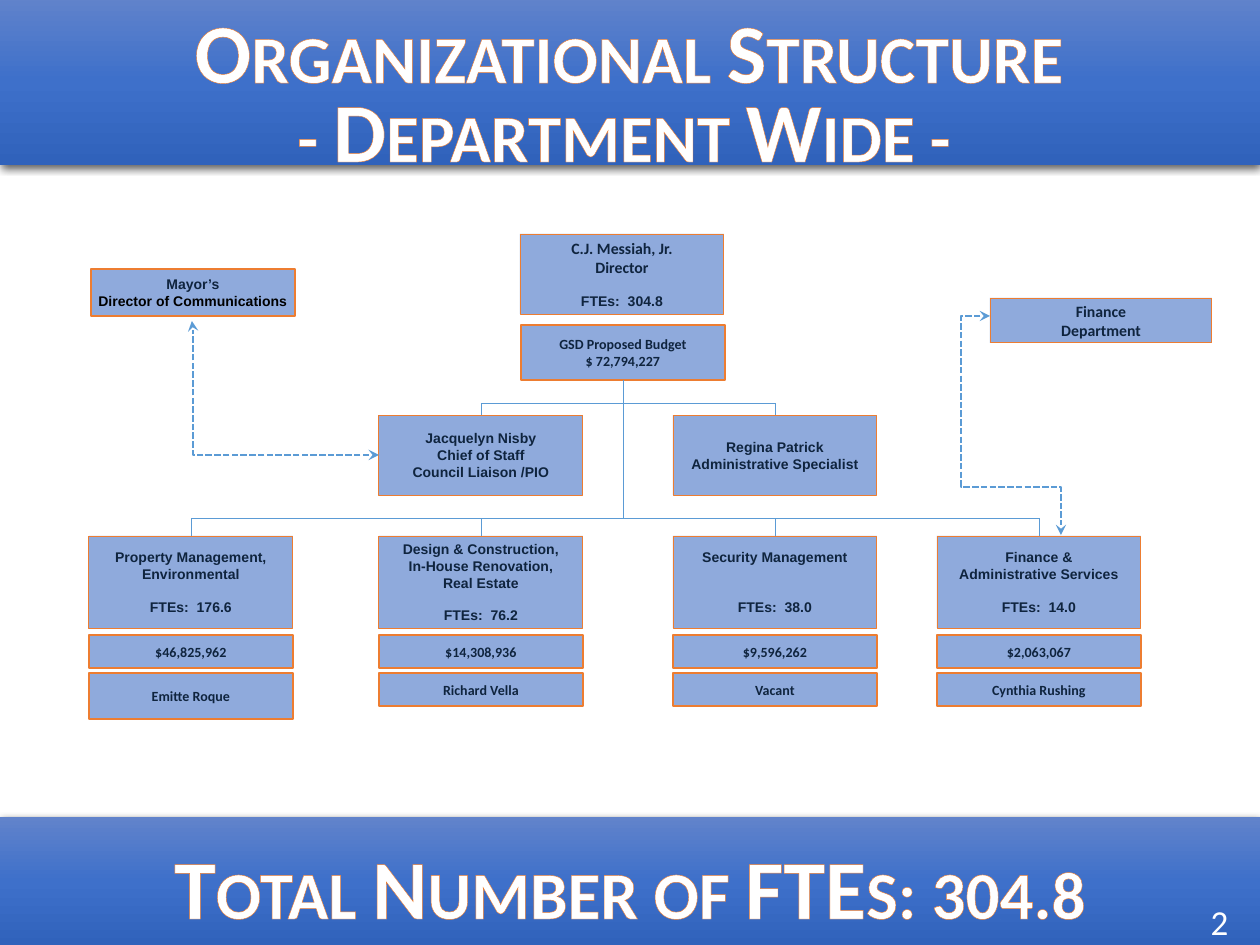
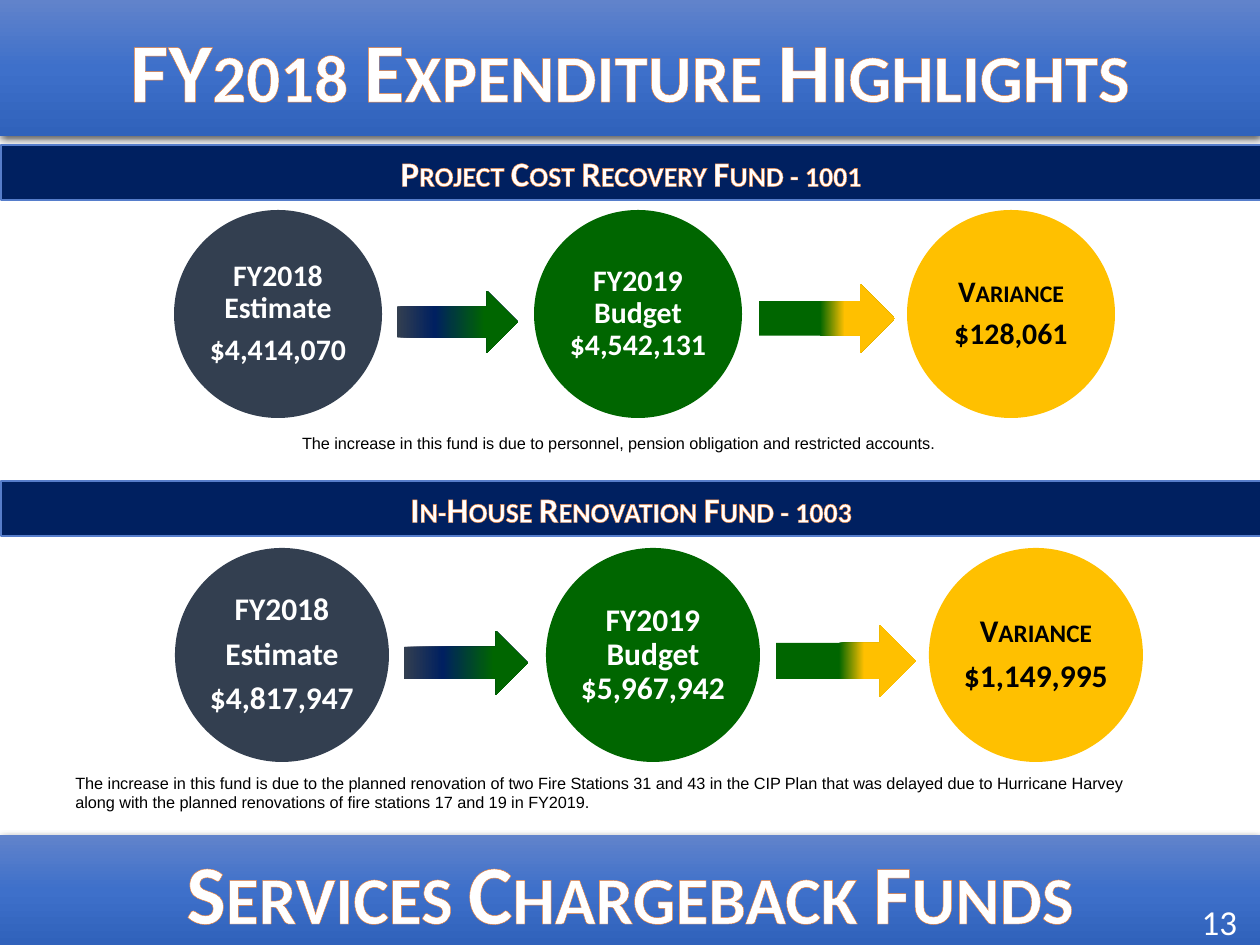
from dataclasses import dataclass

from pptx import Presentation
from pptx.dml.color import RGBColor
from pptx.enum.dml import MSO_LINE
from pptx.enum.shapes import MSO_CONNECTOR, MSO_SHAPE
from pptx.enum.text import MSO_ANCHOR, PP_ALIGN
from pptx.oxml import parse_xml
from pptx.oxml.ns import nsdecls, qn
from pptx.util import Pt

RECT, OVAL, ARROW = MSO_SHAPE.RECTANGLE, MSO_SHAPE.OVAL, MSO_SHAPE.RIGHT_ARROW
STRAIGHT, ELBOW = MSO_CONNECTOR.STRAIGHT, MSO_CONNECTOR.ELBOW
CENTER, LEFT = PP_ALIGN.CENTER, PP_ALIGN.LEFT
MIDDLE = MSO_ANCHOR.MIDDLE
DASHED = MSO_LINE.SQUARE_DOT
TOP_SIDE, BOTTOM_SIDE = 0, 2
WIDTH, HEIGHT = 1260, 945


def emu(px):
    return round(px * 914400 / 126)


def rgb(color):
    return RGBColor.from_string(color)


@dataclass(frozen=True)
class Theme:
    heading: str = "Calibri"
    body: str = "Arial"
    white: str = "FFFFFF"
    black: str = "000000"
    ink: str = "0F243E"
    box: str = "8FAADC"
    accent: str = "ED7D31"
    link: str = "5B9BD5"
    navy: str = "002060"
    bar_edge: str = "567DCB"
    slate: str = "333F50"
    green: str = "006600"
    gold: str = "FFC000"
    band: tuple = ((0, "6183CB"), (50, "3E70CA"), (100, "3062BB"))
    title_size: float = 48
    bar_size: float = 20
    box_size: float = 8
    name_size: float = 9
    note_size: float = 9.3
    number_size: float = 20


class Deck:
    def __init__(self, theme):
        self.theme = theme
        self.prs = Presentation()
        self.prs.slide_width, self.prs.slide_height = emu(WIDTH), emu(HEIGHT)
        self.slide = None

    def new_slide(self):
        self.slide = self.prs.slides.add_slide(self.prs.slide_layouts[6])

    def shape(self, kind, x, y, w, h, fill=None, line=None, weight=0.75):
        sp = self.slide.shapes.add_shape(kind, emu(x), emu(y), emu(w), emu(h))
        sp.shadow.inherit = False
        if fill:
            sp.fill.solid()
            sp.fill.fore_color.rgb = rgb(fill)
        if line:
            sp.line.color.rgb = rgb(line)
            sp.line.width = Pt(weight)
        else:
            sp.line.fill.background()
        return sp

    def gradient(self, sp, stops, angle):
        sp.fill.background()
        gs = "".join(
            f'<a:gs pos="{pos * 1000}"><a:srgbClr val="{color}"/></a:gs>'
            for pos, color in stops)
        props = sp._element.spPr
        props.replace(props.find(qn("a:noFill")), parse_xml(
            f'<a:gradFill {nsdecls("a")} rotWithShape="1"><a:gsLst>{gs}</a:gsLst>'
            f'<a:lin ang="{angle * 60000}" scaled="0"/></a:gradFill>'))

    def style(self, p, font, size, color, bold=True, align=CENTER):
        p.alignment = align
        for r in p.runs:
            r.font.name, r.font.size = font, Pt(size)
            r.font.bold, r.font.color.rgb = bold, rgb(color)

    def small_caps(self, p, outline=False):
        for r in p.runs:
            props = r._r.get_or_add_rPr()
            props.set("cap", "small")
            if outline:
                props.insert(0, parse_xml(
                    f'<a:ln {nsdecls("a")} w="6600"><a:solidFill><a:srgbClr '
                    f'val="{self.theme.accent}"/></a:solidFill></a:ln>'))

    def set_text(self, sp, lines, font, size, color, bold=True, align=CENTER, wrap=True):
        tf = sp.text_frame
        tf.text = "\n".join(lines)
        tf.word_wrap, tf.vertical_anchor = wrap, MIDDLE
        for p in tf.paragraphs:
            self.style(p, font, size, color, bold, align)
        return tf

    def label(self, x, y, w, h, text, font, size, color, bold=False, align=CENTER):
        sp = self.slide.shapes.add_textbox(emu(x), emu(y), emu(w), emu(h))
        return self.set_text(sp, [text], font, size, color, bold, align)

    def band(self, y, h):
        sp = self.shape(RECT, 0, y, WIDTH, h)
        self.gradient(sp, self.theme.band, 90)
        effects = sp._element.spPr.find(qn("a:effectLst"))
        effects.append(parse_xml(
            f'<a:outerShdw {nsdecls("a")} blurRad="57150" dist="19050" dir="5400000" '
            f'algn="ctr" rotWithShape="0"><a:srgbClr val="{self.theme.black}">'
            '<a:alpha val="63000"/></a:srgbClr></a:outerShdw>'))

    def title(self, text, y, x=0):
        t = self.theme
        tf = self.label(x, y, WIDTH, 115, text, t.heading, t.title_size, t.white, True)
        self.small_caps(tf.paragraphs[0], outline=True)

    def page_number(self, number):
        t = self.theme
        self.label(1179, 898, 81, 47, str(number), t.heading, t.number_size, t.white)

    def note(self, x, y, w, h, text, align):
        t = self.theme
        self.label(x, y, w, h, text, t.body, t.note_size, t.black, align=align)

    def bar(self, y, text):
        t = self.theme
        sp = self.shape(RECT, 1, y, WIDTH, 55, t.navy, t.bar_edge)
        tf = self.set_text(sp, [text], t.heading, t.bar_size, t.white)
        self.small_caps(tf.paragraphs[0], outline=True)

    def box(self, x, y, w, h, lines, font, size=None, gap=0, weight=0.5):
        t = self.theme
        sp = self.shape(RECT, x, y, w, h, t.box, t.accent, weight)
        tf = self.set_text(sp, lines, font, size or t.box_size, t.ink, wrap=False)
        if gap:
            tf.paragraphs[-1].space_before = Pt(gap)
        return sp

    def circle(self, x, y, d, lines, fill, color, size):
        sp = self.shape(OVAL, x, y, d, d, fill)
        tf = self.set_text(sp, lines, self.theme.heading, size, color)
        tf.margin_left = tf.margin_right = tf.margin_top = tf.margin_bottom = emu(3)
        for p in tf.paragraphs:
            p.line_spacing, p.space_after = 0.9, Pt(6)
        return tf

    def arrow(self, x, y, w, h, stops):
        self.gradient(self.shape(ARROW, x, y, w, h), stops, 0)

    def line(self, x1, y1, x2, y2, kind=STRAIGHT, weight=0.5):
        c = self.slide.shapes.add_connector(kind, emu(x1), emu(y1), emu(x2), emu(y2))
        c.line.color.rgb, c.line.width = rgb(self.theme.link), Pt(weight)
        c._element.spPr.append(parse_xml(f'<a:effectLst {nsdecls("a")}/>'))
        return c

    def elbow(self, x1, y1, x2, y2, preset, *adjustments):
        c = self.line(x1, y1, x2, y2, ELBOW, 1.25)
        c.line.dash_style = DASHED
        props = c._element.spPr
        for end in ("headEnd", "tailEnd"):
            props.find(qn("a:ln")).append(parse_xml(
                f'<a:{end} {nsdecls("a")} type="stealth"/>'))
        guides = "".join(f'<a:gd name="adj{n}" fmla="val {value}"/>'
                         for n, value in adjustments)
        props.replace(props.find(qn("a:prstGeom")), parse_xml(
            f'<a:prstGeom {nsdecls("a")} prst="{preset}"><a:avLst>{guides}</a:avLst>'
            '</a:prstGeom>'))


def organization(s):
    t = s.theme
    s.new_slide()
    s.band(-4, 169)
    s.title("Organizational Structure", -8, -1)
    s.title("- Department Wide -", 71, -6)
    s.band(817, 129)
    s.title("Total Number of FTEs: 304.8", 828)
    s.page_number(2)

    box_w, staff_y, staff_bar, dept_y, dept_bar = 204, 415, 403, 536, 518
    columns = 89, 379, 673, 937
    director = s.box(520, 234, box_w, 80, ["C.J. Messiah, Jr.", "Director", "FTEs:  304.8"],
                     t.heading, t.name_size, gap=9)
    s.style(director.text_frame.paragraphs[-1], t.body, t.box_size, t.ink)
    budget = s.box(521, 325, box_w, 55, ["GSD Proposed Budget", "$ 72,794,227"],
                   t.heading, weight=0.75)
    mayor = s.box(91, 269, box_w, 47, ["Mayor’s", "Director of Communications"],
                  t.body, weight=1)
    s.style(mayor.text_frame.paragraphs[-1], t.body, t.box_size, t.black)
    s.box(990, 298, 222, 45, ["Finance", "Department"], t.heading, t.name_size)

    trunk = s.line(623, 380, 623, dept_bar)
    trunk.begin_connect(budget, BOTTOM_SIDE)
    staff = (
        (columns[1], ["Jacquelyn Nisby", "Chief of Staff", "Council Liaison /PIO"]),
        (columns[2], ["Regina Patrick", "Administrative Specialist"]),
    )
    departments = (
        (["Property Management,", "Environmental", "FTEs:  176.6"], 9,
         "$46,825,962", "Emitte Roque", 46),
        (["Design & Construction,", "In-House Renovation,", "Real Estate", "FTEs:  76.2"], 9,
         "$14,308,936", "Richard Vella", 33),
        (["Security Management", "FTEs:  38.0"], 19, "$9,596,262", "Vacant", 33),
        (["Finance &", "Administrative Services", "FTEs:  14.0"], 9,
         "$2,063,067", "Cynthia Rushing", 33),
    )
    drops = []
    for x, lines in staff:
        drops.append((s.box(x, staff_y, box_w, 80, lines, t.body), x, staff_y, staff_bar))
    for x, (lines, gap, amount, head, head_h) in zip(columns, departments):
        sp = s.box(x, dept_y, box_w, 92, lines, t.body, gap=gap)
        drops.append((sp, x, dept_y, dept_bar))
        s.box(x, 635, box_w, 33, [amount], t.heading, weight=0.75)
        s.box(x, 673, box_w, head_h, [head], t.heading, weight=0.75)
    half = box_w // 2
    for sp, x, y, bar_y in drops:
        s.line(x + half, y, x + half, bar_y).begin_connect(sp, TOP_SIDE)
    for first, last, y in ((1, 2, staff_bar), (0, 3, dept_bar)):
        s.line(columns[first] + half, y, columns[last] + half, y)
    s.elbow(379, 455, 192, 321, "bentConnector3", (1, 99400))
    s.elbow(990, 316, 1061, 535, "bentConnector4", (1, -40600), (2, 78000))


def expenditure(s):
    t = s.theme
    s.new_slide()
    s.band(835, 110)
    s.title("Services Chargeback Funds", 833)
    s.band(0, 136)
    s.title("FY2018 Expenditure Highlights", 11)
    s.page_number(13)
    to_budget = (0, t.slate), (31, t.navy), (73, t.green)
    to_variance = (0, t.green), (45, t.green), (63, t.gold)
    funds = (
        (145, "Project Cost Recovery Fund - 1001", 17, 210, 208, (174, 534, 907),
         ["FY2018 Estimate", "$4,414,070"], "$4,542,131", "$128,061",
         (397, 291, 121, 62), (759, 284, 136, 69)),
        (481, "In-House Renovation Fund - 1003", 18, 548, 214, (175, 546, 929),
         ["FY2018", "Estimate", "$4,817,947"], "$5,967,942", "$1,149,995",
         (404, 631, 124, 64), (776, 625, 140, 72)),
    )
    for (bar_y, name, size, y, d, xs, estimate, budget, variance,
         first_arrow, second_arrow) in funds:
        s.bar(bar_y, name)
        s.circle(xs[0], y, d, estimate, t.slate, t.white, size)
        s.arrow(*first_arrow, to_budget)
        s.circle(xs[1], y, d, [f"FY2019 Budget {budget}"], t.green, t.white, size)
        s.arrow(*second_arrow, to_variance)
        tf = s.circle(xs[2], y, d, ["Variance", variance], t.gold, t.black, size)
        s.small_caps(tf.paragraphs[0])
    s.note(83, 426, 1071, 33, "The increase in this fund is due to personnel, "
           "pension obligation and restricted accounts.", CENTER)
    s.note(63, 766, 1111, 53, "The increase in this fund is due to the planned renovation "
           "of two Fire Stations 31 and 43 in the CIP Plan that was delayed due to Hurricane "
           "Harvey along with the planned renovations of fire stations 17 and 19 in FY2019.",
           LEFT)


def main():
    s = Deck(Theme())
    organization(s)
    expenditure(s)
    s.prs.save("out.pptx")


if __name__ == "__main__":
    main()
